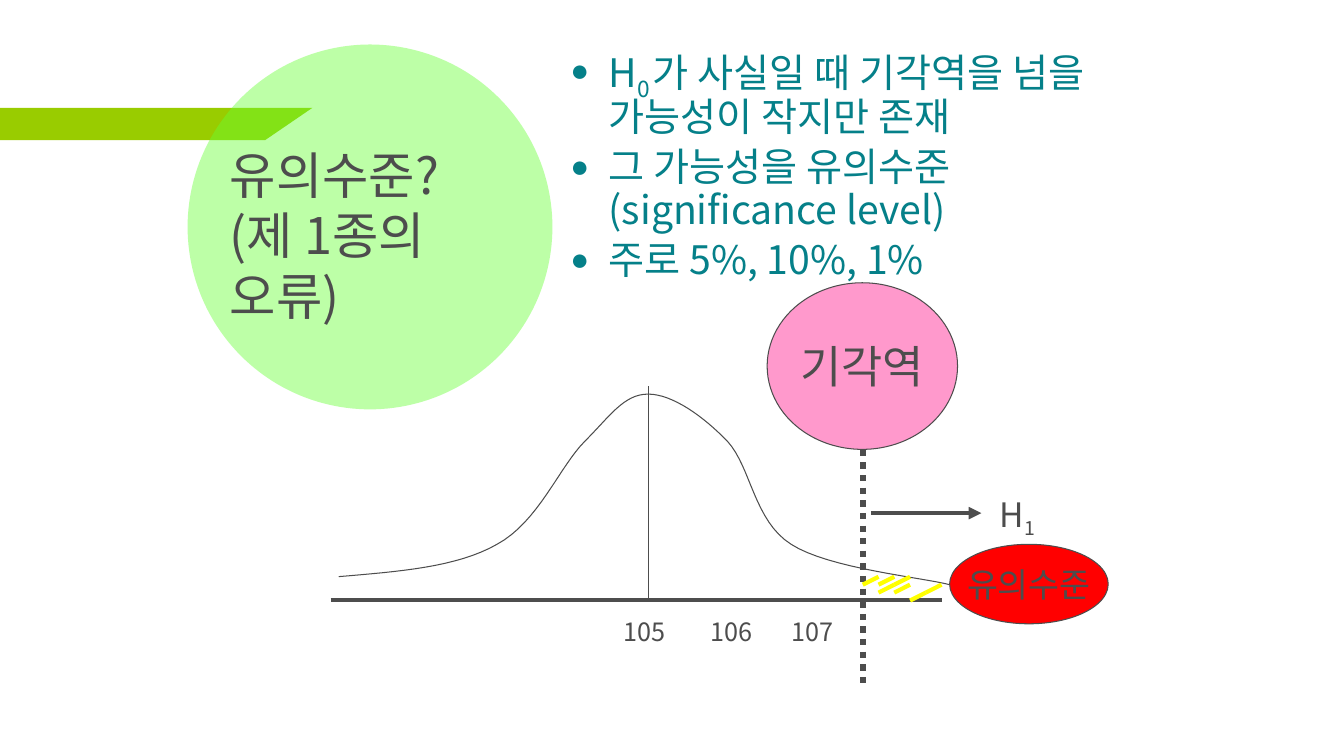
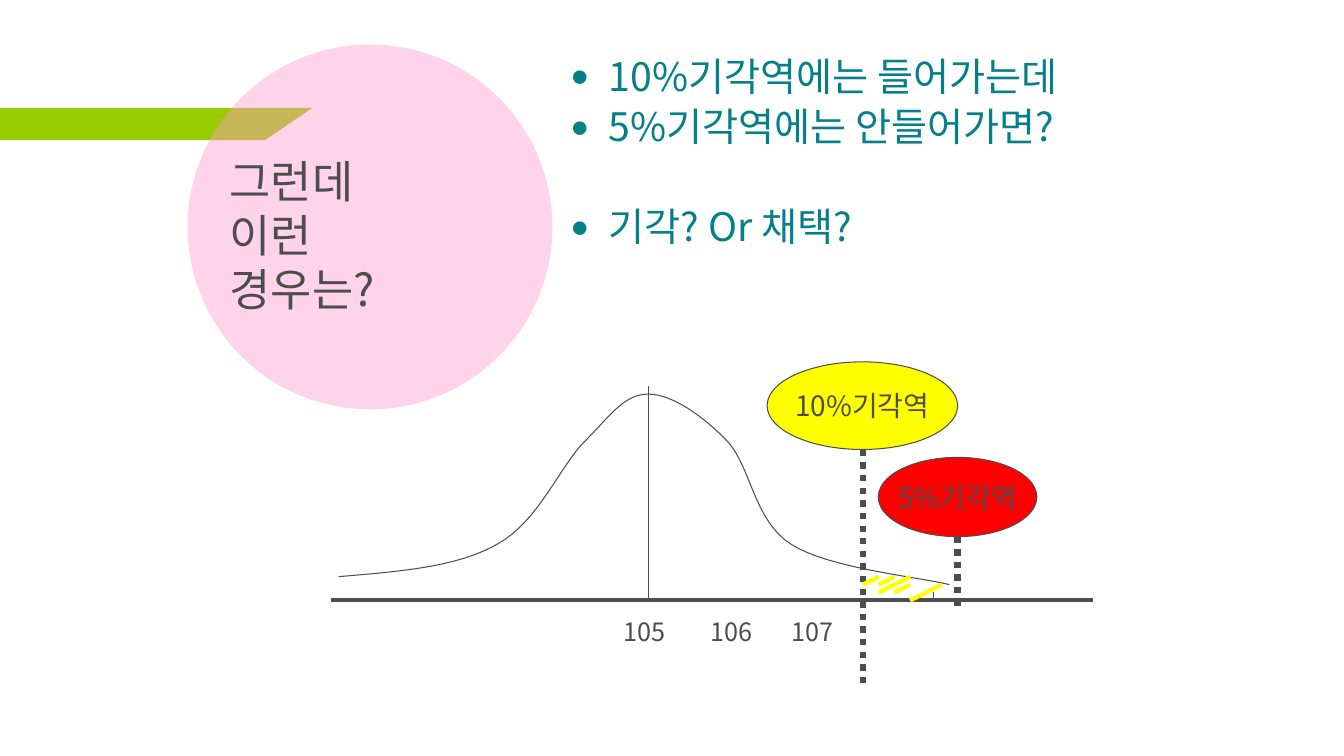
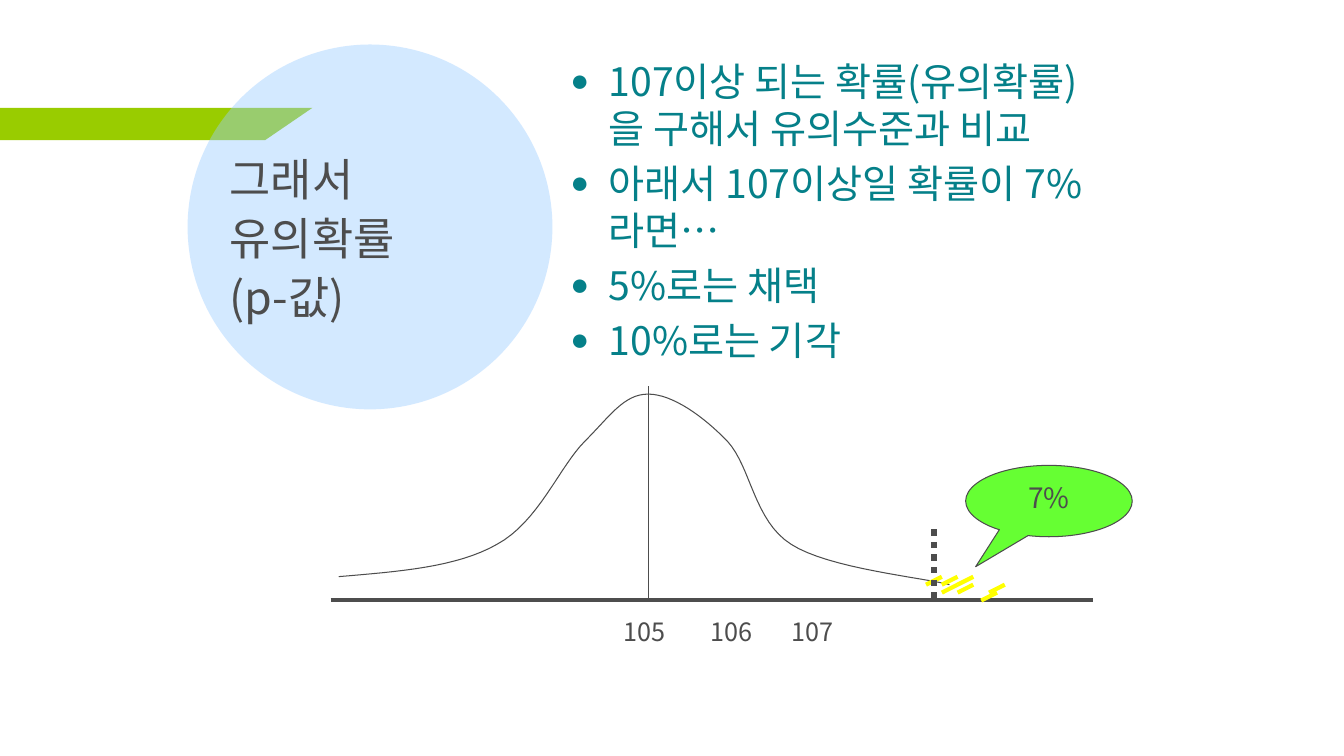
import dataclasses

import lxml.etree
import pptx
import pptx.dml.color
import pptx.enum.dml
import pptx.enum.shapes
import pptx.enum.text
import pptx.oxml.ns
import pptx.util

Pt = pptx.util.Pt
RGBColor = pptx.dml.color.RGBColor
Preset = pptx.enum.shapes.MSO_SHAPE
Anchor = pptx.enum.text.MSO_ANCHOR
Align = pptx.enum.text.PP_ALIGN
qn = pptx.oxml.ns.qn

GRAY = RGBColor(0x4D, 0x4D, 0x4D)
TEAL = RGBColor(0x05, 0x80, 0x89)
OLIVE = RGBColor(0x99, 0xCC, 0x00)
GREEN = RGBColor(0x66, 0xFF, 0x33)
PINK = RGBColor(0xFF, 0x99, 0xCC)
BLUE = RGBColor(0x99, 0xCC, 0xFF)
YELLOW = RGBColor(0xFF, 0xFF, 0x00)
RED = RGBColor(0xFF, 0x00, 0x00)
FONT = "Noto Sans CJK KR"
BULLET_FONT = "Arial"

BODY_SIZE = 28
BODY_INDENT = 27.4
PARAGRAPH_GAP = 5.6
AXIS_Y = 428.6
MEAN_X = 463
LIMIT_X = 616.3
LABEL_TABS = (62.1, 120)
BAND = ((0, 77), (223.2, 77), (189.4, 100.1), (0, 100.1))
CURVE_START = (242, 411.9)
CURVE = (
    ((283.7, 408.3), (326.2, 405.4), (355, 388.8)),
    ((384.5, 373), (399.6, 333.4), (417.6, 315.4)),
    ((435.6, 297.4), (445.7, 281.5), (463, 281.5)),
    ((480.2, 281.5), (502.6, 297.4), (519.8, 315.4)),
    ((536.4, 333.4), (538.6, 372.2), (565.2, 388.8)),
    ((591.8, 406.1), (659.5, 412.6), (678.2, 417.6)),
)
CURVE_STEPS = 16
HATCH_TOP = 412
HATCH_WIDTH = 11.25
HATCH_HEIGHT = 5.65


@dataclasses.dataclass(frozen=True)
class Rect:
    left: float
    top: float
    width: float
    height: float


@dataclasses.dataclass(frozen=True)
class Span:
    text: str
    size: float = BODY_SIZE
    font: str = FONT
    subscript: bool = False


@dataclasses.dataclass(frozen=True)
class Bullet:
    spans: tuple[Span, ...]
    gap: float = PARAGRAPH_GAP


@dataclasses.dataclass(frozen=True)
class Topic:
    title: str
    title_size: float
    circle: RGBColor
    bullets: tuple[Bullet, ...]
    body_top: float
    axis_end: float
    title_spacing: float = 1.0
    body_spacing: float = 0.9


def place(rect: Rect) -> tuple:
    return Pt(rect.left), Pt(rect.top), Pt(rect.width), Pt(rect.height)


def write_text(para, text: str, *, size: float, color: RGBColor = GRAY,
               font: str = FONT, subscript: bool = False) -> None:
    for index, piece in enumerate(text.split("\n")):
        if index:
            para.add_line_break()
        span = para.add_run()
        span.text = piece
        span.font.size = Pt(size)
        span.font.color.rgb = color
        span.font.name = font
        properties = span.font._element
        properties.find(qn("a:latin")).addnext(
            lxml.etree.Element(qn("a:ea"), typeface=FONT))
        if subscript:
            properties.set("baseline", "-25000")


def add_box(page, rect: Rect, anchor=Anchor.TOP, wrap: bool = True):
    frame = page.shapes.add_textbox(*place(rect)).text_frame
    frame.word_wrap = wrap
    frame.vertical_anchor = anchor
    return frame


def add_line(page, start: tuple, end: tuple, width: float = 0.75,
             color: RGBColor = GRAY, dotted: bool = False, arrow: bool = False) -> None:
    line = page.shapes.add_connector(
        pptx.enum.shapes.MSO_CONNECTOR.STRAIGHT,
        Pt(start[0]), Pt(start[1]), Pt(end[0]), Pt(end[1]))
    line.line.width = Pt(width)
    line.line.color.rgb = color
    if dotted:
        line.line.dash_style = pptx.enum.dml.MSO_LINE.ROUND_DOT
    if arrow:
        lxml.etree.SubElement(line.line._get_or_add_ln(), qn("a:tailEnd"), type="triangle")
    lxml.etree.SubElement(line._element.spPr, qn("a:effectLst"))


def add_outline(page, points: list, closed: bool):
    corners = [(Pt(x), Pt(y)) for x, y in points]
    builder = page.shapes.build_freeform(*corners[0])
    builder.add_line_segments(corners[1:], close=closed)
    shape = builder.convert_to_shape()
    shape.shadow.inherit = False
    return shape


def add_oval(page, rect: Rect, fill: RGBColor, text: str, size: float,
             preset=Preset.OVAL, anchor=Anchor.MIDDLE, wrap: bool = False):
    oval = page.shapes.add_shape(preset, *place(rect))
    oval.shadow.inherit = False
    oval.fill.solid()
    oval.fill.fore_color.rgb = fill
    oval.line.color.rgb = GRAY
    oval.line.width = Pt(0.75)
    frame = oval.text_frame
    frame.word_wrap = wrap
    frame.vertical_anchor = anchor
    frame.paragraphs[0].alignment = Align.CENTER
    write_text(frame.paragraphs[0], text, size=size)
    return oval


def add_title(page, topic: Topic) -> None:
    band = add_outline(page, list(BAND), closed=True)
    band.fill.solid()
    band.fill.fore_color.rgb = OLIVE
    band.line.fill.background()
    circle = page.shapes.add_shape(Preset.OVAL, *place(Rect(134, 31.8, 260.6, 260.6)))
    circle.shadow.inherit = False
    circle.fill.solid()
    circle.fill.fore_color.rgb = topic.circle
    color = circle._element.spPr.find(qn("a:solidFill"))[0]
    lxml.etree.SubElement(color, qn("a:alpha"), val="43000")
    circle.line.fill.background()
    frame = add_box(page, Rect(157, 54.7, 198.7, 226), Anchor.MIDDLE)
    frame.paragraphs[0].line_spacing = topic.title_spacing
    write_text(frame.paragraphs[0], topic.title, size=topic.title_size)


def add_bullet_mark(para) -> None:
    properties = para._p.get_or_add_pPr()
    properties.set("marL", str(Pt(BODY_INDENT)))
    properties.set("indent", str(-Pt(BODY_INDENT)))
    color = lxml.etree.SubElement(properties, qn("a:buClr"))
    lxml.etree.SubElement(color, qn("a:srgbClr"), val=str(TEAL))
    lxml.etree.SubElement(properties, qn("a:buSzPct"), val="80000")
    lxml.etree.SubElement(properties, qn("a:buFont"), typeface=BULLET_FONT)
    lxml.etree.SubElement(properties, qn("a:buChar"), char="●")


def add_bullets(page, topic: Topic) -> None:
    frame = add_box(page, Rect(400.3, topic.body_top, 396.7, 175.7))
    for index, bullet in enumerate(topic.bullets):
        para = frame.add_paragraph() if index else frame.paragraphs[0]
        para.line_spacing = topic.body_spacing
        para.space_before = Pt(bullet.gap)
        add_bullet_mark(para)
        for span in bullet.spans:
            write_text(para, span.text, size=span.size, color=TEAL,
                       font=span.font, subscript=span.subscript)


def curve_points() -> list:
    points = [CURVE_START]
    for first, second, end in CURVE:
        start = points[-1]
        for step in range(1, CURVE_STEPS + 1):
            t = step / CURVE_STEPS
            u = 1 - t
            points.append(tuple(
                u ** 3 * a + 3 * u * u * t * b + 3 * u * t * t * c + t ** 3 * d
                for a, b, c, d in zip(start, first, second, end)))
    return points


def add_distribution(page, axis_end: float) -> None:
    curve = add_outline(page, curve_points(), closed=False)
    curve.fill.background()
    curve.line.color.rgb = GRAY
    curve.line.width = Pt(0.75)
    add_line(page, (236.2, AXIS_Y), (axis_end, AXIS_Y), width=3)
    para = add_box(page, Rect(438.5, 437, 251.3, 28.8), wrap=False).paragraphs[0]
    write_text(para, "105\t106\t107", size=18)
    tabs = lxml.etree.SubElement(para._p.get_or_add_pPr(), qn("a:tabLst"))
    for position in LABEL_TABS:
        lxml.etree.SubElement(tabs, qn("a:tab"), pos=str(Pt(position)), algn="l")
    add_line(page, (MEAN_X, 275.8), (MEAN_X, AXIS_Y))


def add_hatching(page, left: float, low_column: float = 4) -> None:
    cells = ((1, 0), (2, 0), (2, 1), (3, 1), (low_column, 2), (5, 1), (3, 0))
    for column, row in cells:
        x = left + column * HATCH_WIDTH
        y = HATCH_TOP + row * HATCH_HEIGHT
        add_line(page, (x, y), (x - HATCH_WIDTH, y + HATCH_HEIGHT), width=3, color=YELLOW)


def add_limit(page, x: float, top: float, bottom: float) -> None:
    add_line(page, (x, top), (x, bottom), width=4.5, dotted=True)


def add_tick(page) -> None:
    add_line(page, (667.1, 423.2), (667.1, AXIS_Y))


def start_page(deck, topic: Topic):
    page = deck.slides.add_slide(deck.slide_layouts[6])
    add_title(page, topic)
    add_distribution(page, topic.axis_end)
    add_bullets(page, topic)
    return page


def plain(*texts: str) -> tuple[Bullet, ...]:
    return tuple(Bullet((Span(text),)) for text in texts)


def add_significance_page(deck) -> None:
    hypothesis = Bullet((
        Span("H"), Span("0", subscript=True), Span(" ", size=10),
        Span("가 사실일 때 기각역을 넘을 가능성이 작지만 존재")))
    page = start_page(deck, Topic(
        "유의수준?\n(제 1종의 오류)", 36, GREEN,
        (hypothesis, *plain("그 가능성을 유의수준(significance level)", "주로 5%, 10%, 1%")),
        body_top=31.8, axis_end=672.8))
    add_limit(page, LIMIT_X, 321.3, 491)
    add_line(page, (622, 366.5), (701, 366.5), width=3, arrow=True)
    para = add_box(page, Rect(707, 349.2, 64, 36)).paragraphs[0]
    write_text(para, "H", size=24)
    write_text(para, "1", size=24, subscript=True)
    add_oval(page, Rect(548, 202, 136, 119), PINK, "기각역", 32)
    add_hatching(page, LIMIT_X)
    add_oval(page, Rect(678.3, 388.8, 113.3, 56.8), RED, "유의수준", 24)


def add_conflict_page(deck) -> None:
    question = Bullet((Span("기각? Or 채택?"),), gap=41.4)
    page = start_page(deck, Topic(
        "그런데\n이런\n경우는?", 32, PINK,
        (*plain("10%기각역에는 들어가는데", "5%기각역에는 안들어가면?"), question),
        body_top=37.4, axis_end=780.5))
    add_limit(page, LIMIT_X, 321.3, 491)
    add_oval(page, Rect(548, 258.5, 136, 62.6), YELLOW, "10%기각역", 20)
    add_hatching(page, LIMIT_X)
    add_oval(page, Rect(627.3, 326.7, 113.3, 56.6), RED, "5%기각역", 20)
    add_limit(page, 684, 383.3, 434.2)
    add_tick(page)


def add_probability_page(deck) -> None:
    example = Bullet((Span("아래서 107이상일 확률이 7%라면"), Span("…", font="Arial")))
    page = start_page(deck, Topic(
        "그래서\n유의확률\n(p-값)", 32, BLUE,
        (*plain("107이상 되는 확률(유의확률)을 구해서 유의수준과 비교"), example,
         *plain("5%로는 채택", "10%로는 기각")),
        body_top=37.4, axis_end=780.5, title_spacing=1.1, body_spacing=1.0))
    add_hatching(page, 661.5, low_column=4.5)
    add_tick(page)
    add_limit(page, 667.1, 378, AXIS_Y)
    callout = add_oval(page, Rect(689.8, 332.4, 119, 51), GREEN, "7%", 20,
                       preset=Preset.OVAL_CALLOUT, anchor=Anchor.TOP, wrap=True)
    callout.adjustments[0] = -0.44
    callout.adjustments[1] = 0.92


def main() -> None:
    deck = pptx.Presentation()
    deck.slide_width = Pt(960)
    deck.slide_height = Pt(540)
    add_significance_page(deck)
    add_conflict_page(deck)
    add_probability_page(deck)
    deck.save("out.pptx")


if __name__ == "__main__":
    main()
